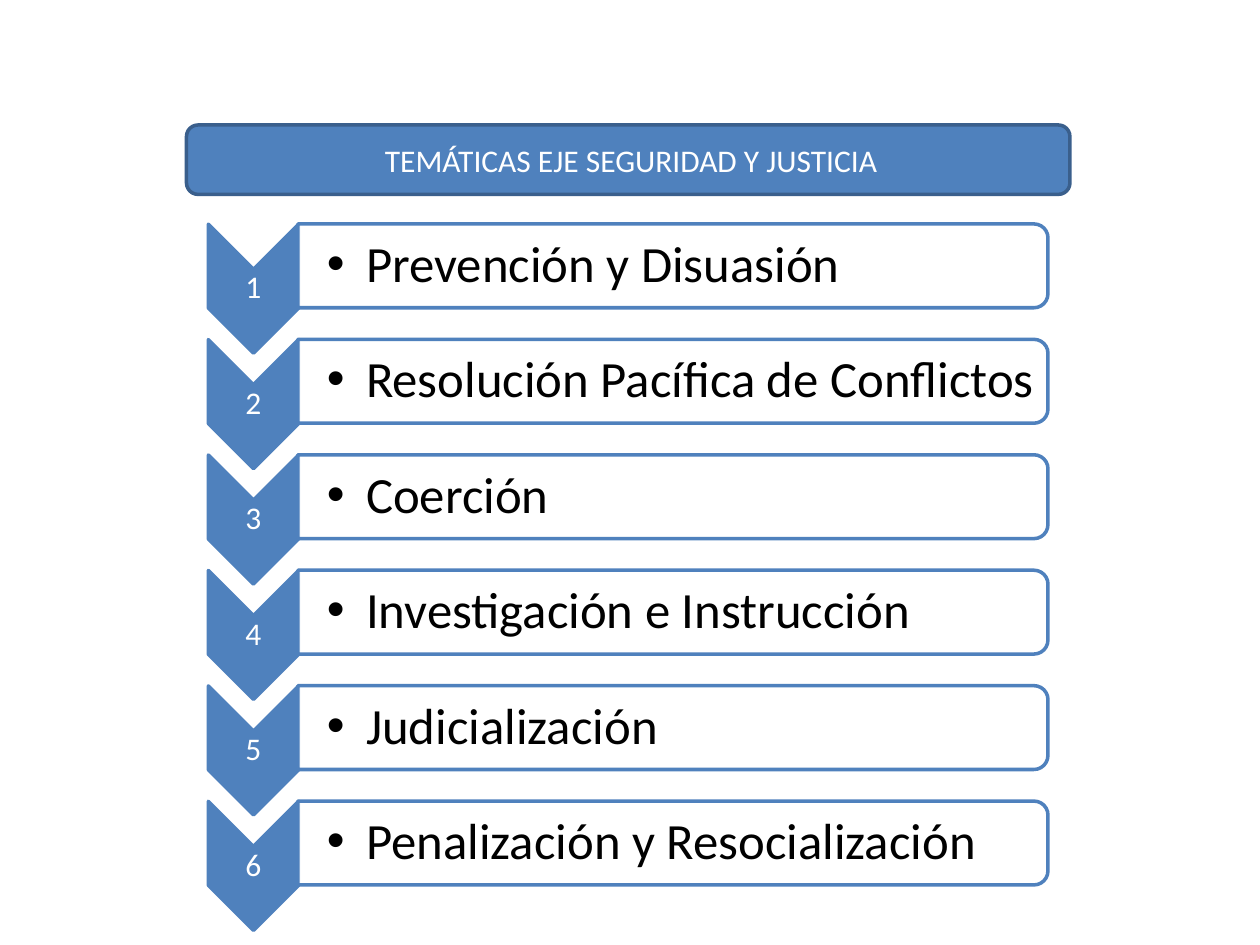
import pptx
import pptx.util
import pptx.dml.color
import pptx.enum.shapes
import pptx.enum.text
import pptx.oxml
import pptx.oxml.ns

Cm, Pt = pptx.util.Cm, pptx.util.Pt
SHAPE = pptx.enum.shapes.MSO_SHAPE
ALIGN = pptx.enum.text.PP_ALIGN
qn = pptx.oxml.ns.qn


def color(hex_code):
    return pptx.dml.color.RGBColor.from_string(hex_code)


def write(tf, text, size=18, fill="FFFFFF", align=ALIGN.CENTER,
          inset=(0.25, 0.13), spacing=None, bullet=None, indent=0.79):
    """Write one paragraph; inset is (left, other sides) in cm."""
    tf.word_wrap = True
    tf.vertical_anchor = pptx.enum.text.MSO_ANCHOR.MIDDLE
    tf.margin_left = Cm(inset[0])
    tf.margin_right = tf.margin_top = tf.margin_bottom = Cm(inset[1])
    p = tf.paragraphs[0]
    p.alignment = align
    if spacing:
        p.line_spacing = spacing
    if bullet:
        pPr = p._p.get_or_add_pPr()
        pPr.set("marL", str(Cm(indent)))
        pPr.set("indent", str(-Cm(indent)))
        for tag, key, value in (("a:buFont", "typeface", "Arial"),
                                ("a:buChar", "char", bullet)):
            pptx.oxml.ns  # namespace map used by qn
            pPr.append(pPr.makeelement(qn(tag), {key: value}))
    r = p.add_run()
    r.text = text
    r.font.name, r.font.size = "Calibri", Pt(size)
    r.font.color.rgb = color(fill)


class Deck:
    blue, border = "4F81BD", "3A5F8C"

    def __init__(self, prs):
        self.s = prs.slides.add_slide(prs.slide_layouts[6])

    def shape(self, kind, x, y, w, h, fill=blue, line=blue, rotation=0, alpha=None):
        sp = self.s.shapes.add_shape(kind, Cm(x), Cm(y), Cm(w), Cm(h))
        sp.shadow.inherit = False
        sp.rotation = rotation
        sp.fill.solid()
        sp.fill.fore_color.rgb = color(fill)
        sp.line.color.rgb = color(line)
        sp.line.width = Pt(2)
        if alpha:
            clr = sp._element.spPr.find(qn("a:solidFill"))[0]
            clr.append(clr.makeelement(qn("a:alpha"), {"val": str(alpha * 1000)}))
        return sp

    def text(self, text, x, y, w, h, **fmt):
        sp = self.s.shapes.add_textbox(Cm(x), Cm(y), Cm(w), Cm(h))
        write(sp.text_frame, text, **fmt)
        return sp


def main():
    prs = pptx.Presentation()
    prs.slide_width, prs.slide_height = Cm(25.4), Cm(19.05)
    deck = Deck(prs)

    # Numbered topics: chevron and bar are turned a quarter, text stays level
    topics = ["Prevención y Disuasión", "Resolución Pacífica de Conflictos",
              "Coerción", "Investigación e Instrucción",
              "Judicialización", "Penalización y Resocialización"]
    for i, topic in enumerate(topics):
        dy = i * 2.327
        deck.shape(SHAPE.CHEVRON, 3.81, 4.91 + dy, 2.6, 1.82, rotation=90)
        deck.text(str(i + 1), 4.2, 5.43 + dy, 1.82, 0.78,
                  inset=(0.03, 0.03), spacing=0.9)
        deck.shape(SHAPE.ROUND_2_SAME_RECTANGLE, 12.72, -2.2 + dy, 1.69, 15.12,
                   fill="FFFFFF", rotation=90, alpha=90)
        deck.text(topic, 6.02, 4.6 + dy, 15.04, 1.52, size=29, fill="000000",
                  align=ALIGN.LEFT, inset=(0.57, 0.05), spacing=0.9, bullet="•")

    # Heading
    heading = deck.shape(SHAPE.ROUNDED_RECTANGLE, 3.76, 2.52, 17.81, 1.4,
                         line=deck.border)
    write(heading.text_frame, "TEMÁTICAS EJE SEGURIDAD Y JUSTICIA")

    prs.save("out.pptx")


if __name__ == "__main__":
    main()
